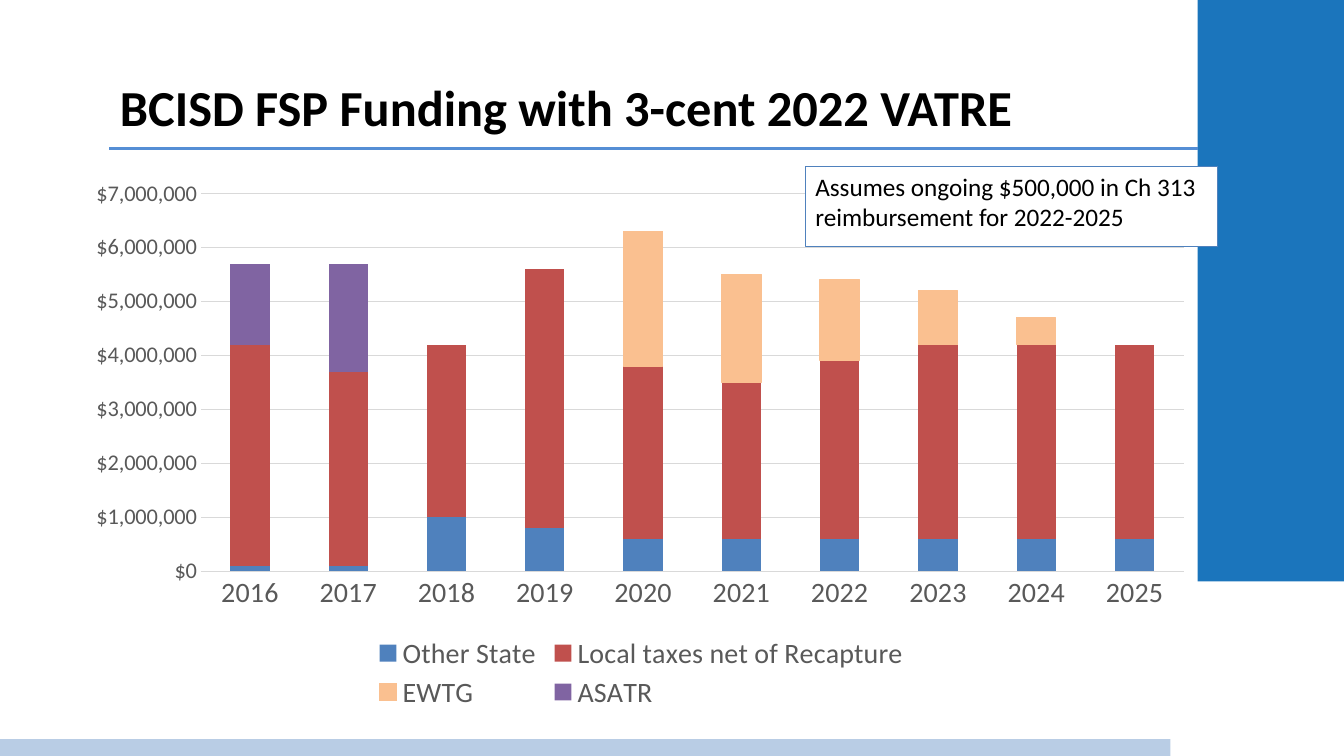
import pptx
import pptx.chart.data
import pptx.dml.color
import pptx.enum.chart
import pptx.enum.shapes
import pptx.enum.text
import pptx.oxml
import pptx.oxml.ns
import pptx.util

Pt = pptx.util.Pt
qn = pptx.oxml.ns.qn
FONT = "Calibri"
GREY = "595959"
GRID = "D9D9D9"

YEARS = [str(year) for year in range(2016, 2026)]
FUNDING = [
    ("Other State", "4F81BD", [100000, 100000, 1000000, 800000] + [600000] * 6),
    ("Local taxes net of Recapture", "C0504D",
     [4100000, 3600000, 3200000, 4800000, 3200000, 2900000, 3300000] + [3600000] * 3),
    ("EWTG", "FAC090", [None] * 4 + [2500000, 2000000, 1500000, 1000000, 500000, 0]),
    ("ASATR", "8064A2", [1500000, 2000000] + [0] * 8),
]


def rgb(color):
    return pptx.dml.color.RGBColor.from_string(color)


def box(left, top, width, height):
    return Pt(left), Pt(top), Pt(width), Pt(height)


def set_font(font, size, color, bold=False):
    font.name = FONT
    font.size = Pt(size)
    font.bold = bold
    font.color.rgb = rgb(color)


def set_line(line, color, width):
    line.color.rgb = rgb(color)
    line.width = Pt(width)


def add_text(sp, text, size=18, color="000000", bold=False, anchor="TOP"):
    tf = sp.text_frame
    tf.word_wrap = True
    tf.vertical_anchor = pptx.enum.text.MSO_ANCHOR[anchor]
    p = tf.paragraphs[0]
    p.alignment = pptx.enum.text.PP_ALIGN.LEFT
    r = p.add_run()
    r.text = text
    set_font(r.font, size, color, bold)


def add_rect(s, place, fill, line=None):
    sp = s.shapes.add_shape(pptx.enum.shapes.MSO_SHAPE.RECTANGLE, *box(*place))
    sp.shadow.inherit = False
    sp.fill.solid()
    sp.fill.fore_color.rgb = rgb(fill)
    if line:
        set_line(sp.line, line, 0.75)
    else:
        sp.line.fill.background()
    return sp


def add_rule(s, x1, x2, y, color, width):
    line = s.shapes.add_connector(
        pptx.enum.shapes.MSO_CONNECTOR.STRAIGHT, Pt(x1), Pt(y), Pt(x2), Pt(y))
    set_line(line.line, color, width)
    pptx.oxml.ns  
    effects = pptx.oxml.parse_xml(
        '<a:effectLst xmlns:a="http://schemas.openxmlformats.org/drawingml/2006/main"/>')
    line._element.spPr.append(effects)


def set_layout(parent, index, x, y, w, h, inner=False):
    for old in parent.findall(qn("c:layout")):
        parent.remove(old)
    target = '<c:layoutTarget val="inner"/>' if inner else ""
    sizes = "".join(f'<c:{k} val="{v}"/>' for k, v in zip("xywh", (x, y, w, h)))
    parent.insert(index, pptx.oxml.parse_xml(
        '<c:layout xmlns:c="http://schemas.openxmlformats.org/drawingml/2006/chart">'
        f'<c:manualLayout>{target}<c:xMode val="edge"/><c:yMode val="edge"/>'
        f'{sizes}</c:manualLayout></c:layout>'))


def format_axes(chart):
    none = pptx.enum.chart.XL_TICK_MARK.NONE
    years, dollars = chart.category_axis, chart.value_axis
    for axis, size in ((years, 20), (dollars, 16)):
        axis.major_tick_mark = axis.minor_tick_mark = none
        set_font(axis.tick_labels.font, size, GREY)
    set_line(years.format.line, GRID, 0.75)
    dollars.format.line.fill.background()
    dollars.minimum_scale = 0
    dollars.maximum_scale = 7000000
    dollars.major_unit = 1000000
    set_line(dollars.major_gridlines.format.line, GRID, 0.75)
    dollars.tick_labels.number_format = '"$"#,##0'
    dollars.tick_labels.number_format_is_linked = False


def add_funding_chart(s, place):
    data = pptx.chart.data.CategoryChartData()
    data.categories = YEARS
    for name, _, values in FUNDING:
        data.add_series(name, values)
    chart = s.shapes.add_chart(
        pptx.enum.chart.XL_CHART_TYPE.COLUMN_STACKED, *box(*place), data).chart
    chart.has_title = False
    set_font(chart.font, 10, "000000")
    plot = chart.plots[0]
    plot.gap_width = 150
    plot.overlap = 100
    plot.vary_by_categories = False
    for series, (_, color, _) in zip(plot.series, FUNDING):
        series.format.fill.solid()
        series.format.fill.fore_color.rgb = rgb(color)
    set_line(plot.series[2].format.line, "FAC090", 0.75)
    format_axes(chart)
    chart.has_legend = True
    legend = chart.legend
    legend.position = pptx.enum.chart.XL_LEGEND_POSITION.BOTTOM
    legend.include_in_layout = False
    set_font(legend.font, 20, GREY)
    set_layout(legend._element, 1, 0.26, 0.85, 0.48, 0.15)
    plot_area = chart._chartSpace.chart.plotArea
    set_layout(plot_area, 0, 0.11, 0.05, 0.87, 0.69, inner=True)


def main():
    prs = pptx.Presentation()
    prs.slide_width, prs.slide_height = Pt(960), Pt(540)
    s = prs.slides.add_slide(prs.slide_layouts[5])
    title = s.shapes.title
    title.left, title.top, title.width, title.height = box(78.5, 46, 814.3, 60)
    add_text(title, "BCISD FSP Funding with 3-cent 2022 VATRE",
             size=36, bold=True, anchor="MIDDLE")
    add_rect(s, (855.4, 0, 104.6, 415.4), "1B75BC")
    add_rect(s, (0, 528, 836, 12), "B9CDE5")
    add_rule(s, 856, 77.8, 106, "558ED5", 2.25)
    add_funding_chart(s, (54.7, 118.8, 807, 391))
    note = add_rect(s, (575.3, 118.8, 294.5, 57), "FFFFFF", "4F81BD")
    add_text(note, "Assumes ongoing $500,000 in Ch 313 reimbursement for 2022-2025")
    prs.save("out.pptx")


if __name__ == "__main__":
    main()
